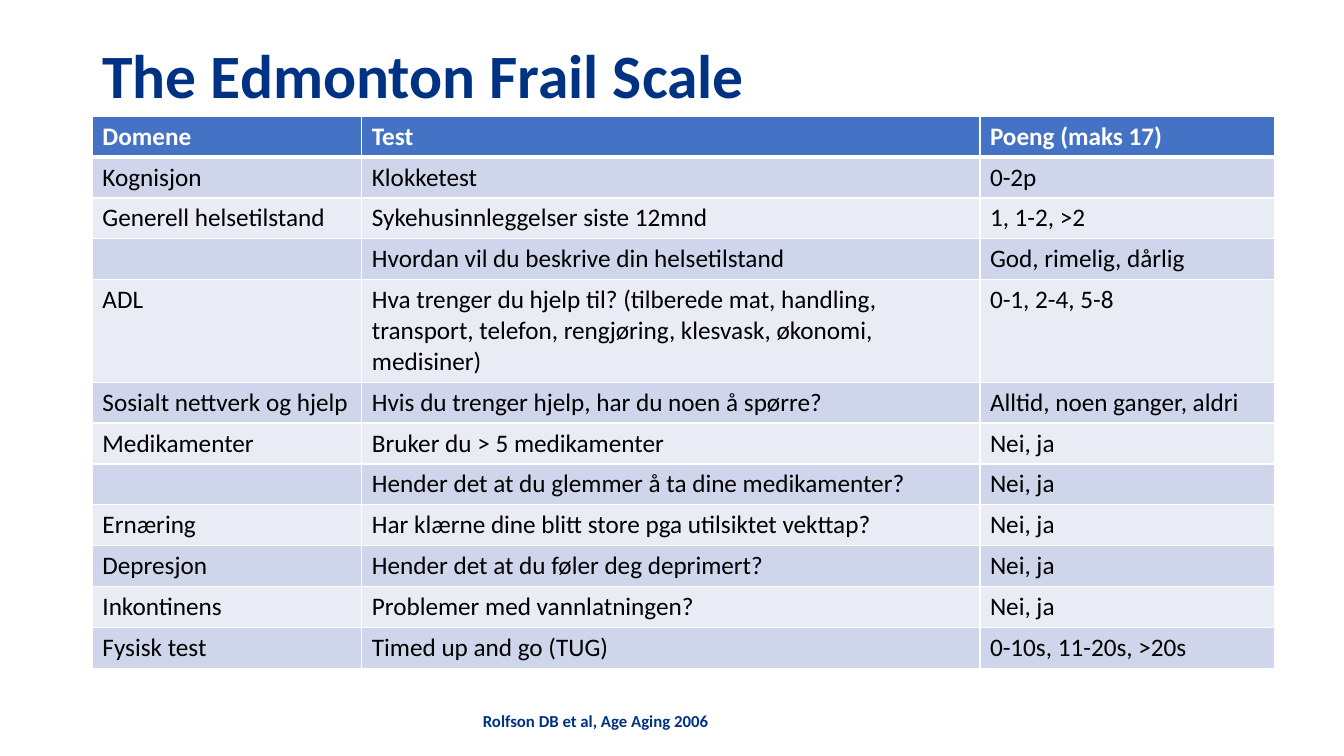
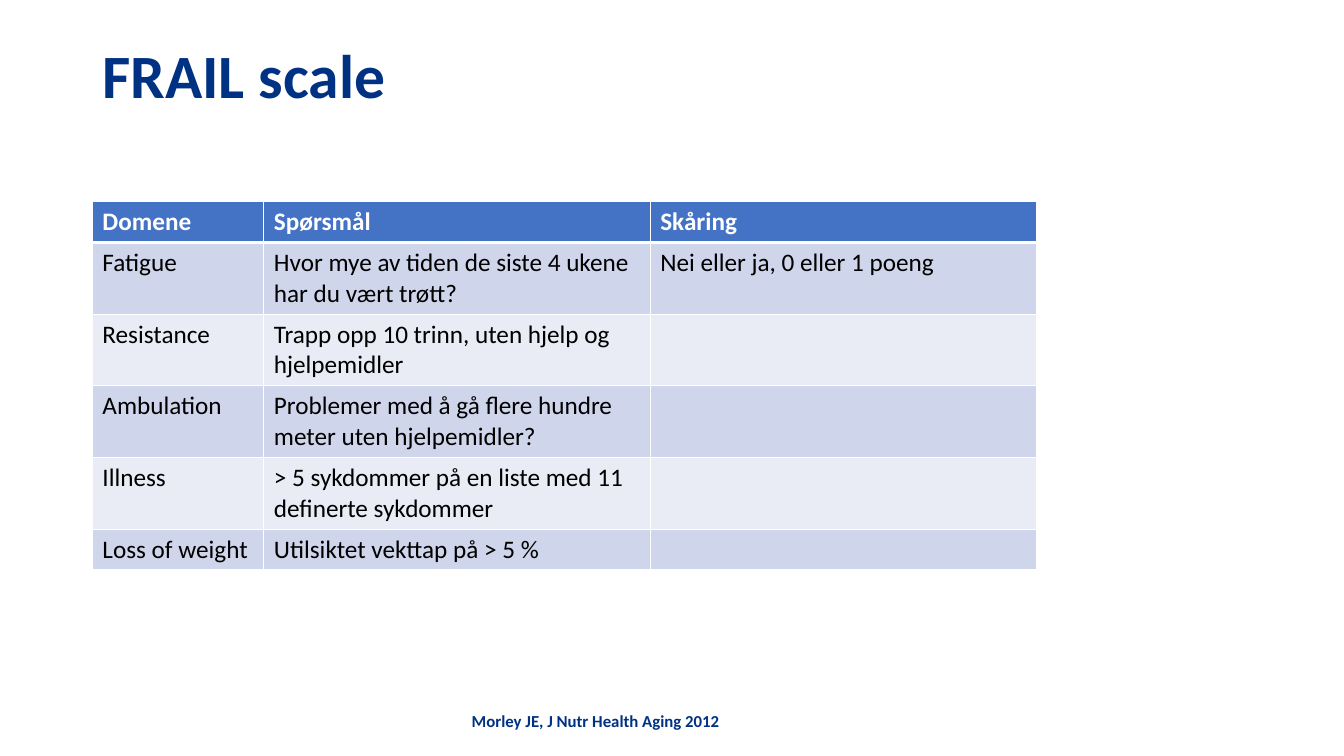
"""Build two slides that present frailty scales as tables."""
from dataclasses import dataclass

from pptx import Presentation
from pptx.dml.color import RGBColor
from pptx.enum.text import MSO_ANCHOR as Anchor, MSO_AUTO_SIZE as AutoSize, PP_ALIGN as Align
from pptx.oxml import parse_xml
from pptx.oxml.ns import nsdecls
from pptx.util import Pt

COLORS = {
    "navy": "003283",
    "header": "4472C4",
    "band_dark": "CFD5EA",
    "band_light": "E9EBF5",
    "white": "FFFFFF",
    "black": "000000",
}
FONT = "Calibri"
LEFT = 66
CELL_PADDING = 7.2
LINE_HEIGHT = 22


@dataclass
class Row:
    cells: tuple[str, str, str]
    lines: int = 1

    @property
    def height(self) -> float:
        return CELL_PADDING + LINE_HEIGHT * self.lines


@dataclass
class Scale:
    title: str
    source: str
    top: float
    widths: tuple[float, float, float]
    rows: list[Row]


SCALES = [
    Scale(
        "The Edmonton Frail Scale",
        "Rolfson DB et al, Age Aging 2006",
        83,
        (192.5, 441.5, 210.5),
        [
            Row(("Domene", "Test", "Poeng (maks 17)")),
            Row(("Kognisjon", "Klokketest", "0-2p")),
            Row(("Generell helsetilstand", "Sykehusinnleggelser siste 12mnd", "1, 1-2, >2")),
            Row(("", "Hvordan vil du beskrive din helsetilstand", "God, rimelig, dårlig")),
            Row(("ADL", "Hva trenger du hjelp til? (tilberede mat, handling, transport, "
                 "telefon, rengjøring, klesvask, økonomi, medisiner)", "0-1, 2-4, 5-8"), 3),
            Row(("Sosialt nettverk og hjelp", "Hvis du trenger hjelp, har du noen å spørre?",
                 "Alltid, noen ganger, aldri")),
            Row(("Medikamenter", "Bruker du > 5 medikamenter", "Nei, ja")),
            Row(("", "Hender det at du glemmer å ta dine medikamenter?", "Nei, ja")),
            Row(("Ernæring", "Har klærne dine blitt store pga utilsiktet vekttap?", "Nei, ja")),
            Row(("Depresjon", "Hender det at du føler deg deprimert?", "Nei, ja")),
            Row(("Inkontinens", "Problemer med vannlatningen?", "Nei, ja")),
            Row(("Fysisk test", "Timed up and go (TUG)", "0-10s, 11-20s, >20s")),
        ],
    ),
    Scale(
        "FRAIL scale",
        "Morley JE, J Nutr Health Aging 2012",
        144,
        (122.5, 276, 276),
        [
            Row(("Domene", "Spørsmål", "Skåring")),
            Row(("Fatigue", "Hvor mye av tiden de siste 4 ukene har du vært trøtt?",
                 "Nei eller ja, 0 eller 1 poeng"), 2),
            Row(("Resistance", "Trapp opp 10 trinn, uten hjelp og hjelpemidler", ""), 2),
            Row(("Ambulation", "Problemer med å gå flere hundre meter uten hjelpemidler?", ""), 2),
            Row(("Illness", "> 5 sykdommer på en liste med 11 definerte sykdommer", ""), 2),
            Row(("Loss of weight", "Utilsiktet vekttap på > 5 %", "")),
        ],
    ),
]


def rgb(name: str) -> RGBColor:
    return RGBColor.from_string(COLORS[name])


def style(p, size: float, color: str, bold: bool) -> None:
    p.font.name = FONT
    p.font.size = Pt(size)
    p.font.bold = bold
    p.font.color.rgb = rgb(color)


def add_borders(cell, bottom: float) -> None:
    tc_pr = cell._tc.get_or_add_tcPr()
    for i, (side, width) in enumerate((("L", 1), ("R", 1), ("T", 1), ("B", bottom))):
        tc_pr.insert(i, parse_xml(
            f'<a:ln{side} {nsdecls("a")} w="{Pt(width)}"><a:solidFill>'
            f'<a:srgbClr val="{COLORS["white"]}"/></a:solidFill></a:ln{side}>'))


def add_title(s, text: str) -> None:
    sp = s.shapes.title
    sp.left, sp.top, sp.width, sp.height = Pt(LEFT), Pt(29), Pt(828), Pt(104)
    tf = sp.text_frame
    tf.text = text
    tf.word_wrap = True
    tf.auto_size = AutoSize.NONE
    tf.vertical_anchor = Anchor.TOP
    p = tf.paragraphs[0]
    p.alignment = Align.LEFT
    p.line_spacing = 0.9
    style(p, 44, "navy", True)


def add_scale_table(s, scale: Scale) -> None:
    rows, widths = scale.rows, scale.widths
    table = s.shapes.add_table(
        len(rows), len(widths), Pt(LEFT), Pt(scale.top),
        Pt(sum(widths)), Pt(sum(row.height for row in rows))).table
    for column, width in zip(table.columns, widths):
        column.width = Pt(width)
    for i, row in enumerate(rows):
        table.rows[i].height = Pt(row.height)
        header = i == 0
        fill = "header" if header else "band_dark" if i % 2 else "band_light"
        for j, text in enumerate(row.cells):
            cell = table.cell(i, j)
            cell.text = text
            cell.fill.solid()
            cell.fill.fore_color.rgb = rgb(fill)
            add_borders(cell, 3 if header else 1)
            style(cell.text_frame.paragraphs[0], 18, "white" if header else "black", header)


def add_source(s, text: str) -> None:
    tf = s.shapes.add_textbox(Pt(234), Pt(500.5), Pt(383), Pt(28.5)).text_frame
    tf.text = text
    tf.word_wrap = True
    tf.vertical_anchor = Anchor.MIDDLE
    p = tf.paragraphs[0]
    p.alignment = Align.CENTER
    style(p, 12, "navy", True)


def main() -> None:
    prs = Presentation()
    prs.slide_width, prs.slide_height = Pt(960), Pt(540)
    for scale in SCALES:
        s = prs.slides.add_slide(prs.slide_layouts[5])
        add_title(s, scale.title)
        add_scale_table(s, scale)
        add_source(s, scale.source)
    prs.save("out.pptx")


if __name__ == "__main__":
    main()
